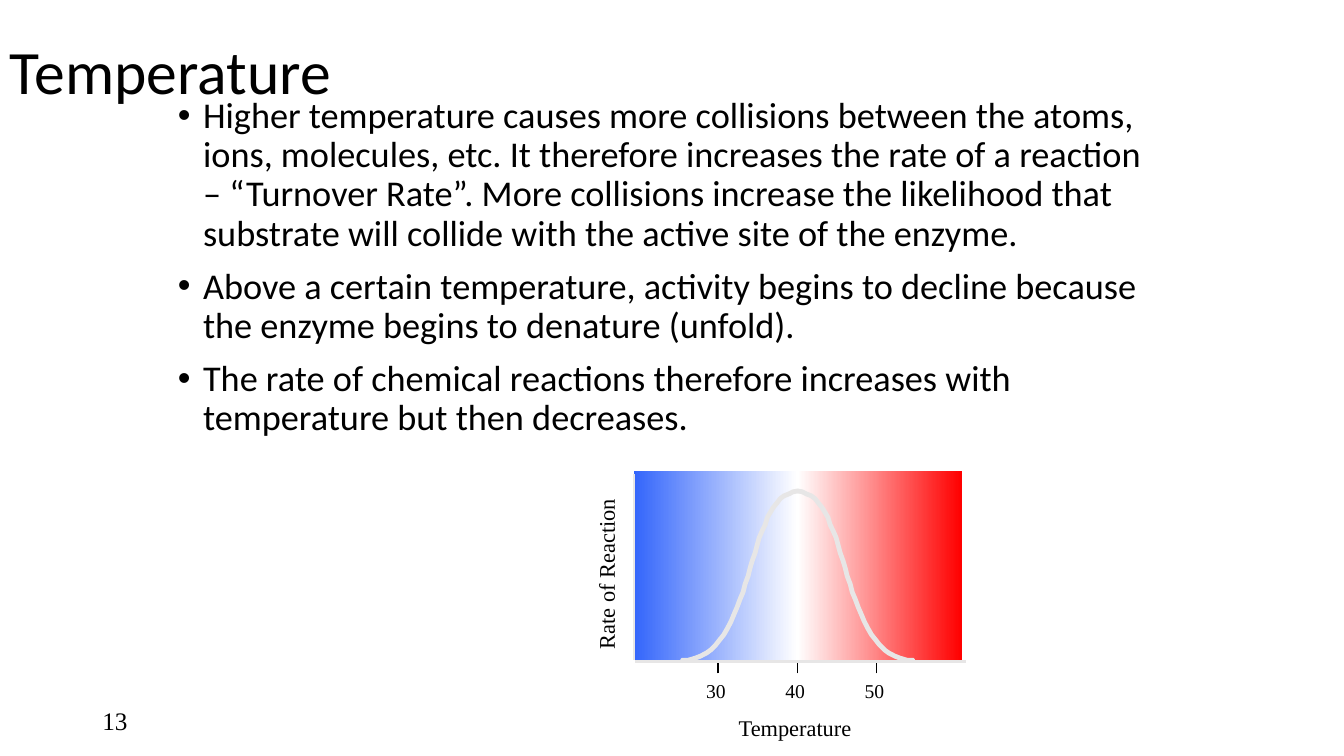
from math import hypot
from lxml import etree
from pptx import Presentation
from pptx.dml.color import RGBColor
from pptx.enum.shapes import MSO_CONNECTOR, MSO_SHAPE
from pptx.enum.text import MSO_ANCHOR, PP_ALIGN
from pptx.oxml.ns import qn
from pptx.util import Pt

LINE, RECT = MSO_CONNECTOR.STRAIGHT, MSO_SHAPE.RECTANGLE
TOP, MID = MSO_ANCHOR.TOP, MSO_ANCHOR.MIDDLE
LEFT, CENTER = PP_ALIGN.LEFT, PP_ALIGN.CENTER

# Content
TITLE = "Temperature"
BULLETS = [
    "Higher temperature causes more collisions between the atoms, ions, "
    "molecules, etc. It therefore increases the rate of a reaction – "
    "“Turnover Rate”. More collisions increase the likelihood that "
    "substrate will collide with the active site of the enzyme.",
    "Above a certain temperature, activity begins to decline because the "
    "enzyme begins to denature (unfold).",
    "The rate of chemical reactions therefore increases with temperature "
    "but then decreases.",
]
PAGE = "13"
X_NAME, Y_NAME = "Temperature", "Rate of Reaction"
TICKS = ["30", "40", "50"]
SANS, SERIF = "Calibri", "Times New Roman"
BLACK, GRAY = "000000", "E7E6E6"
# left, width, first colour, last colour
BANDS = [(569.5, 117.4, "FFFFFF", "FF0000"), (452.9, 116.6, "3365FB", "FFFFFF")]
# Outer edge of the falling half of the bell, measured from its peak
EDGE = [
    (0, 0), (3.6, 0.7), (6.5, 2.2), (10.1, 3.6), (13, 5.8), (15.1, 8.6),
    (18, 12.2), (20.2, 15.8), (22.3, 19.4), (23.8, 24.5), (25.9, 28.8),
    (28.1, 33.8), (29.5, 38.9), (31, 44.6), (33.1, 50.4), (34.6, 55.4),
    (36, 61.2), (38.2, 67), (39.6, 72.7), (41.8, 77.8), (43.9, 83.5),
    (46.1, 88.6), (48.2, 93.6), (50.4, 97.9), (53.3, 103), (56.2, 106.6),
    (59, 110.2), (62.6, 113.8), (65.5, 115.9), (69.8, 118.1),
    (73.4, 119.5), (78.5, 121), (82.8, 121),
]
PEAK = (569.8, 350)
THICK = 1.4
BASE = 472.3  # height of the x axis
MIDDLE, STEP = 569.5, 56.6  # middle tick and tick spacing

prs = Presentation()
prs.slide_width, prs.slide_height = Pt(960), Pt(540)
slide = prs.slides.add_slide(prs.slide_layouts[6])
shapes = slide.shapes


def color(code):
    return RGBColor.from_string(code)


def add_text(lines, box, size, font, anchor=TOP, align=LEFT, wrap=True):
    shape = shapes.add_textbox(*map(Pt, box))
    frame = shape.text_frame
    frame.text = "\n".join(lines)
    frame.word_wrap = wrap
    frame.vertical_anchor = anchor
    for para in frame.paragraphs:
        para.alignment = align
        for run in para.runs:
            run.font.size = Pt(size)
            run.font.name = font
            run.font.color.rgb = color(BLACK)
    return shape


def add_line(x1, y1, x2, y2, code, width):
    line = shapes.add_connector(LINE, Pt(x1), Pt(y1), Pt(x2), Pt(y2))
    line.line.color.rgb = color(code)
    line.line.width = Pt(width)
    etree.SubElement(line._element.spPr, qn("a:effectLst"))


def add_half(side):
    """Draw one half of the bell; side is 1 for right, -1 for left."""
    inner = []
    for i, (x, y) in enumerate(EDGE):
        x1, y1 = EDGE[max(i - 1, 0)]
        x2, y2 = EDGE[min(i + 1, len(EDGE) - 1)]
        size = hypot(x2 - x1, y2 - y1)
        inner.append((x - THICK * (y2 - y1) / size, y + THICK * (x2 - x1) / size))
    ring = [(Pt(PEAK[0] + side * x), Pt(PEAK[1] + y)) for x, y in EDGE + inner[::-1]]
    pen = shapes.build_freeform(*ring[0])
    pen.add_line_segments(ring[1:], close=True)
    half = pen.convert_to_shape()
    half.shadow.inherit = False
    half.fill.solid()
    half.fill.fore_color.rgb = color(BLACK)
    half.line.color.rgb = color(GRAY)
    half.line.width = Pt(2)


# Page number, title and bullets
add_text([PAGE], (66, 500.5, 216, 28.8), 18, SERIF, MID)
title = add_text([TITLE], (0, 0.7, 828, 104.4), 44, SANS, MID)
title.text_frame.paragraphs[0].line_spacing = 0.9
body = add_text(BULLETS, (120, 66, 720, 258), 25.9, SANS)
for para in body.text_frame.paragraphs:
    para.line_spacing = 0.9
    para.space_before = Pt(10)
    props = para._p.get_or_add_pPr()
    props.set("marL", str(Pt(18)))
    props.set("indent", str(-Pt(18)))
    etree.SubElement(props, qn("a:buFont")).set("typeface", "Arial")
    etree.SubElement(props, qn("a:buChar")).set("char", "•")

# Cold and hot bands
for left, width, first, last in BANDS:
    band = shapes.add_shape(RECT, Pt(left), Pt(336.7), Pt(width), Pt(134.8))
    band.shadow.inherit = False
    band.line.fill.background()
    band.fill.gradient()
    band.fill.gradient_angle = 0
    for stop, place, code in zip(band.fill.gradient_stops, (0, 1), (first, last)):
        stop.position = place
        stop.color.rgb = color(code)

# Ticks with their labels, then the axes
for i, tick in enumerate(TICKS):
    x = MIDDLE + (i - 1) * STEP
    add_line(x, 481, x, BASE, BLACK, 1)
    add_text([tick], (x - 21.5, 481.7, 40, 24), 14, SERIF, align=CENTER, wrap=False)
add_line(453.6, BASE, 689.8, BASE, GRAY, 2)
add_line(452.9, 338.4, 452.9, 471.6, GRAY, 2)

# Axis names
name = add_text([Y_NAME], (371.5, 396, 123.1, 26.6), 16, SERIF, wrap=False)
name.rotation = 270
add_text([X_NAME], (520.6, 506.2, 96.5, 26), 16, SERIF, wrap=False)

# Bell curve
for side in (1, -1):
    add_half(side)

prs.save("out.pptx")
